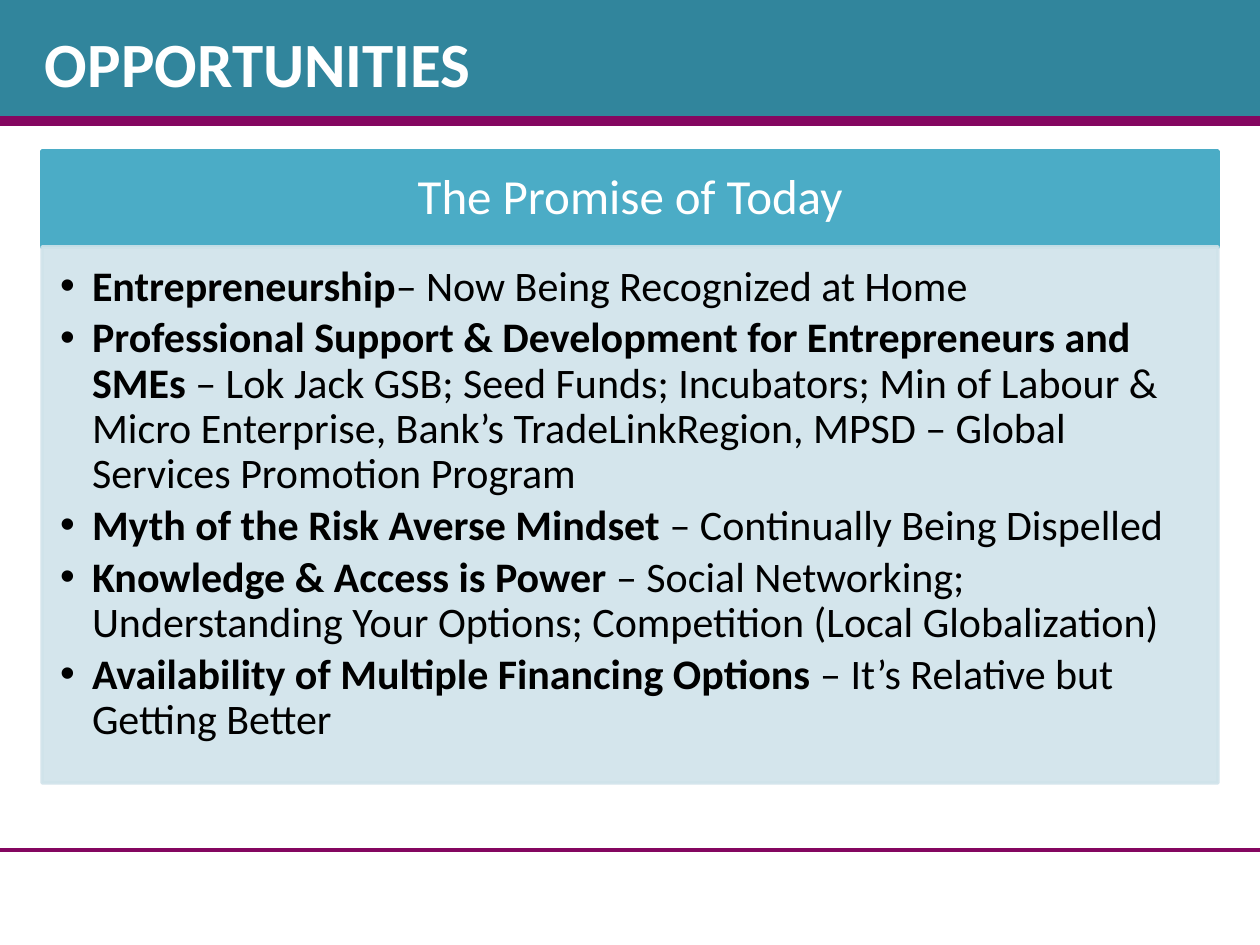
"""Build the Opportunities slide: a title band above a headed list panel."""
from lxml import etree
from pptx import Presentation
from pptx import util as u
from pptx.dml.color import RGBColor
from pptx.enum import shapes, text
from pptx.oxml.ns import qn

PX = 914400 / 126
FONT = "Calibri"
WHITE, BLACK = "FFFFFF", "000000"
TEAL, PLUM, AQUA, PALE = "31859C", "840660", "4BACC6", "D0E3EA"
PANEL_LEFT, PANEL_WIDTH = 42, 1176
INDENT = 32

OPPORTUNITIES = [
    ("Entrepreneurship", "– Now Being Recognized at Home"),
    ("Professional Support & Development for Entrepreneurs and SMEs ",
     "– Lok Jack GSB; Seed Funds; Incubators; Min of Labour & Micro Enterprise, "
     "Bank’s TradeLinkRegion, MPSD – Global Services Promotion Program"),
    ("Myth of the Risk Averse Mindset ", "– Continually Being Dispelled"),
    ("Knowledge & Access is Power ",
     "– Social Networking; Understanding Your Options; Competition (Local Globalization)"),
    ("Availability of Multiple Financing Options ", "– It’s Relative but Getting Better"),
]


def px(length):
    """Turn pixels into EMU."""
    return u.Emu(round(length * PX))


def color(value):
    """Turn a hex string into a colour."""
    return RGBColor.from_string(value)


def set_alpha(fill_owner, percent):
    """Set the opacity of the solid colour within an element."""
    for tint in fill_owner.iter(qn("a:srgbClr")):
        etree.SubElement(tint, qn("a:alpha"), val=str(percent * 1000))


def add_block(page, left, top, width, height, fill, outlined=False, opacity=100):
    """Add a filled rectangle, outlined in its own colour if asked."""
    block = page.shapes.add_shape(
        shapes.MSO_SHAPE.RECTANGLE, px(left), px(top), px(width), px(height))
    block.shadow.inherit = False
    block.fill.solid()
    block.fill.fore_color.rgb = color(fill)
    if outlined:
        block.line.color.rgb = color(fill)
        block.line.width = u.Pt(2)
    else:
        block.line.fill.background()
    if opacity < 100:
        set_alpha(block._element.spPr, opacity)
    return block


def add_rule(page, top, width, stroke):
    """Add a horizontal line from the left edge."""
    rule = page.shapes.add_connector(
        shapes.MSO_CONNECTOR.STRAIGHT, 0, px(top), px(width), px(top))
    rule.line.color.rgb = color(stroke)
    rule.line.width = u.Pt(2.25)
    etree.SubElement(rule._element.spPr, qn("a:effectLst"))


def set_frame(box, insets, anchor):
    """Wrap the text of a box, set its margins and return its frame."""
    frame = box.text_frame
    frame.word_wrap = True
    frame.vertical_anchor = anchor
    (frame.margin_left, frame.margin_top,
     frame.margin_right, frame.margin_bottom) = map(px, insets)
    return frame


def add_span(para, words, size, ink, bold=False):
    """Add a formatted run to a paragraph."""
    span = para.add_run()
    span.text = words
    span.font.name = FONT
    span.font.size = u.Pt(size)
    span.font.bold = bold
    span.font.color.rgb = color(ink)


def set_bullet(para):
    """Give a paragraph a round bullet with a hanging indent."""
    props = para._p.get_or_add_pPr()
    props.set("marL", str(px(INDENT)))
    props.set("indent", str(-px(INDENT)))
    etree.SubElement(props, qn("a:buFont"), typeface="Arial")
    etree.SubElement(props, qn("a:buChar"), char="•")


def add_title(page, words):
    """Add the slide title over its band."""
    box = page.shapes.add_textbox(px(32), px(10), px(1197), px(105))
    frame = set_frame(box, (13, 6, 13, 6), text.MSO_ANCHOR.MIDDLE)
    add_span(frame.paragraphs[0], words, 36, WHITE, bold=True)


def add_heading(page, words, top, height):
    """Add the panel's heading bar."""
    bar = add_block(page, PANEL_LEFT, top, PANEL_WIDTH, height, AQUA, outlined=True)
    frame = set_frame(bar, (28, 15, 28, 15), text.MSO_ANCHOR.MIDDLE)
    para = frame.paragraphs[0]
    para.alignment = text.PP_ALIGN.CENTER
    para.line_spacing = 0.9
    add_span(para, words, 28, WHITE)


def add_list(page, items, top, height):
    """Add the panel body with a bold lead in each bullet."""
    panel = add_block(page, PANEL_LEFT, top, PANEL_WIDTH, height, PALE,
                      outlined=True, opacity=90)
    frame = set_frame(panel, (18, 18, 24, 26), text.MSO_ANCHOR.TOP)
    for index, (lead, detail) in enumerate(items):
        para = frame.add_paragraph() if index else frame.paragraphs[0]
        set_bullet(para)
        para.alignment = text.PP_ALIGN.LEFT
        para.line_spacing = 0.9
        para.space_after = u.Pt(3.6)
        add_span(para, lead, 24, BLACK, bold=True)
        add_span(para, detail, 24, BLACK)


def main():
    """Build and save the slide."""
    deck = Presentation()
    deck.slide_width, deck.slide_height = px(1260), px(945)
    page = deck.slides.add_slide(deck.slide_layouts[6])
    add_block(page, 0, 10, 1260, 116, PLUM)
    add_block(page, 0, 0, 1260, 116, TEAL)
    add_rule(page, 850, 1260, PLUM)
    add_title(page, "OPPORTUNITIES")
    add_heading(page, "The Promise of Today", 151, 96)
    add_list(page, OPPORTUNITIES, 247, 536)
    deck.save("out.pptx")


if __name__ == "__main__":
    main()
